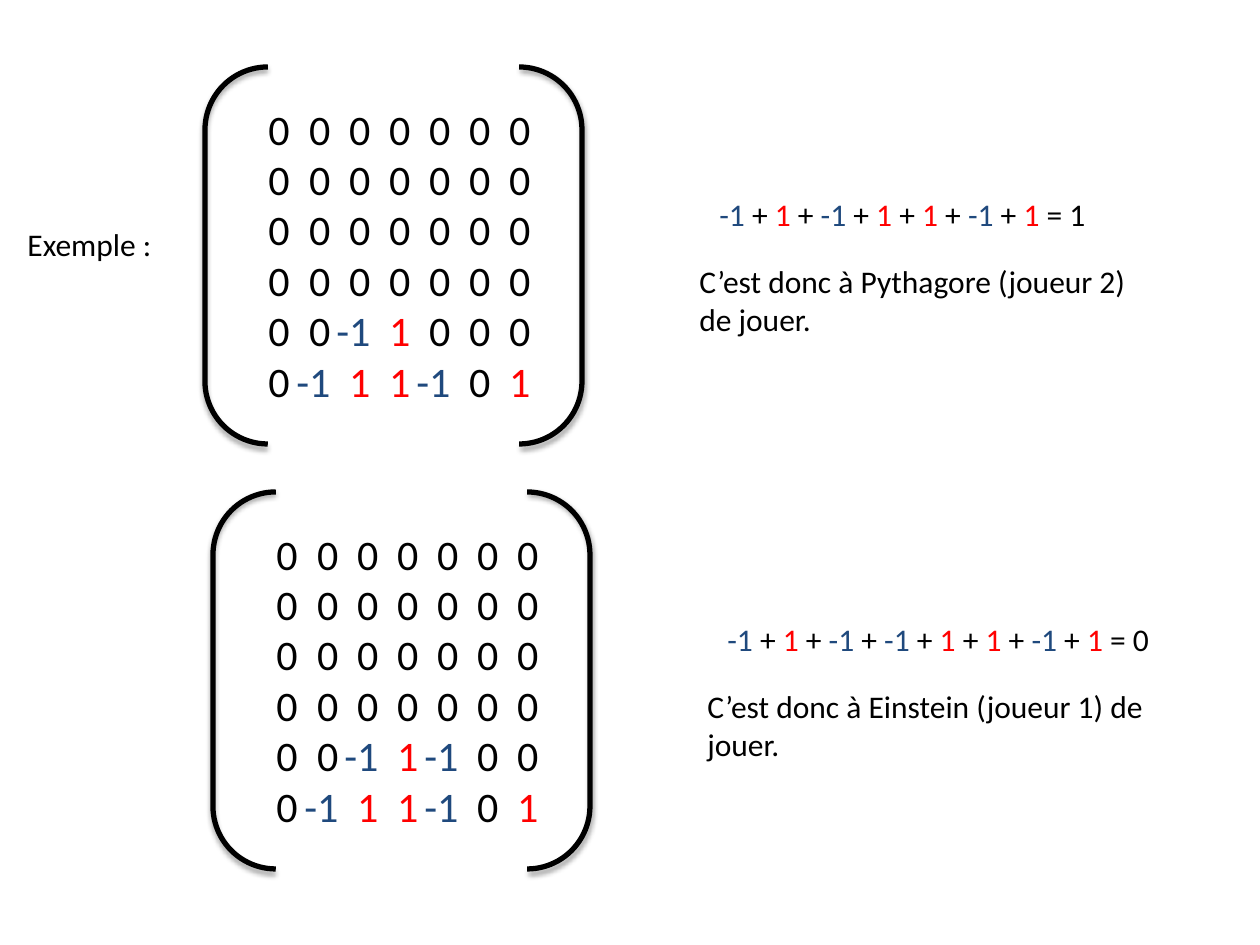
"""Build a slide of two game matrices and the turn that each one implies."""
from lxml.etree import SubElement
from pptx import Presentation
from pptx.dml.color import RGBColor
from pptx.enum.shapes import MSO_SHAPE
from pptx.enum.text import MSO_AUTO_SIZE
from pptx.oxml.ns import qn
from pptx.util import Emu, Pt

HUES = {"ink": "000000", "-1": "1F497D", "1": "FF0000"}
ZERO = "0 0 0 0 0 0 0"
GAMES = [
    {
        "at": (0, 0),
        "rows": [ZERO] * 4 + ["0 0 -1 1 0 0 0", "0 -1 1 1 -1 0 1"],
        "moves": "-1 1 -1 1 1 -1 1",
        "sum": "1",
        "turn": "C’est donc à Pythagore (joueur 2) de jouer.",
    },
    {
        "at": (8, 425),
        "rows": [ZERO] * 4 + ["0 0 -1 1 -1 0 0", "0 -1 1 1 -1 0 1"],
        "moves": "-1 1 -1 -1 1 1 -1 1",
        "sum": "0",
        "turn": "C’est donc à Einstein (joueur 1) de jouer.",
    },
]
SPOTS = {
    "label": (15, 219, 193, 50),
    "frame": (205, 67, 377, 377),
    "grid": (256, 97, 322, 318),
    "total": (707, 189, 506, 50),
    "turn": (687, 256, 476, 89),
}
STEP, EDGE = 40, 22


def px(n):
    return Emu(round(n * 9144000 / 1260))


def place(name, shift=(0, 0)):
    x, y, w, h = SPOTS[name]
    return [px(n) for n in (x + shift[0], y + shift[1], w, h)]


def paint(hue):
    return RGBColor.from_string(HUES.get(hue, HUES["ink"]))


def write(para, text, size=18, hue="ink"):
    run = para.add_run()
    run.text = text
    style = {"name": "Calibri", "size": Pt(size)}
    for key, value in style.items():
        setattr(run.font, key, value)
    run.font.color.rgb = paint(hue)


def add_box(slide, name, shift=(0, 0)):
    frame = slide.shapes.add_textbox(*place(name, shift)).text_frame
    style = {"word_wrap": True, "auto_size": MSO_AUTO_SIZE.SHAPE_TO_FIT_TEXT}
    for key, value in style.items():
        setattr(frame, key, value)
    return frame


def add_frame(slide, shift):
    shape = slide.shapes.add_shape(MSO_SHAPE.DOUBLE_BRACKET, *place("frame", shift))
    shape.shadow.inherit = False
    shape.fill.background()
    shape.line.color.rgb = paint("ink")
    shape.line.width = Pt(3)
    glow = shape._element.spPr.find(qn("a:effectLst"))
    shade = SubElement(glow, qn("a:outerShdw"), blurRad=str(Pt(3.1)),
                       dist=str(Pt(1.8)), dir="5400000", rotWithShape="0")
    tint = SubElement(shade, qn("a:srgbClr"), val=HUES["ink"])
    SubElement(tint, qn("a:alpha"), val="35000")


def add_grid(slide, rows, shift):
    frame = add_box(slide, "grid", shift)
    for i, row in enumerate(rows):
        para = frame.add_paragraph() if i else frame.paragraphs[0]
        tabs = SubElement(para._p.get_or_add_pPr(), qn("a:tabLst"))
        for j, cell in enumerate(row.split()):
            if j:
                SubElement(tabs, qn("a:tab"), pos=str(px(EDGE + j * STEP)), algn="r")
            write(para, "\t" + cell if j else cell, 24, cell)


def add_total(slide, game):
    para = add_box(slide, "total", game["at"]).paragraphs[0]
    for i, move in enumerate(game["moves"].split()):
        if i:
            write(para, " + ")
        write(para, move, hue=move)
    write(para, " = " + game["sum"])


def main():
    deck = Presentation()
    deck.slide_width, deck.slide_height = px(1260), px(945)
    slide = deck.slides.add_slide(deck.slide_layouts[6])
    write(add_box(slide, "label").paragraphs[0], "Exemple :")
    for game in GAMES:
        add_frame(slide, game["at"])
        add_grid(slide, game["rows"], game["at"])
        add_total(slide, game)
        write(add_box(slide, "turn", game["at"]).paragraphs[0], game["turn"])
    deck.save("out.pptx")


if __name__ == "__main__":
    main()
